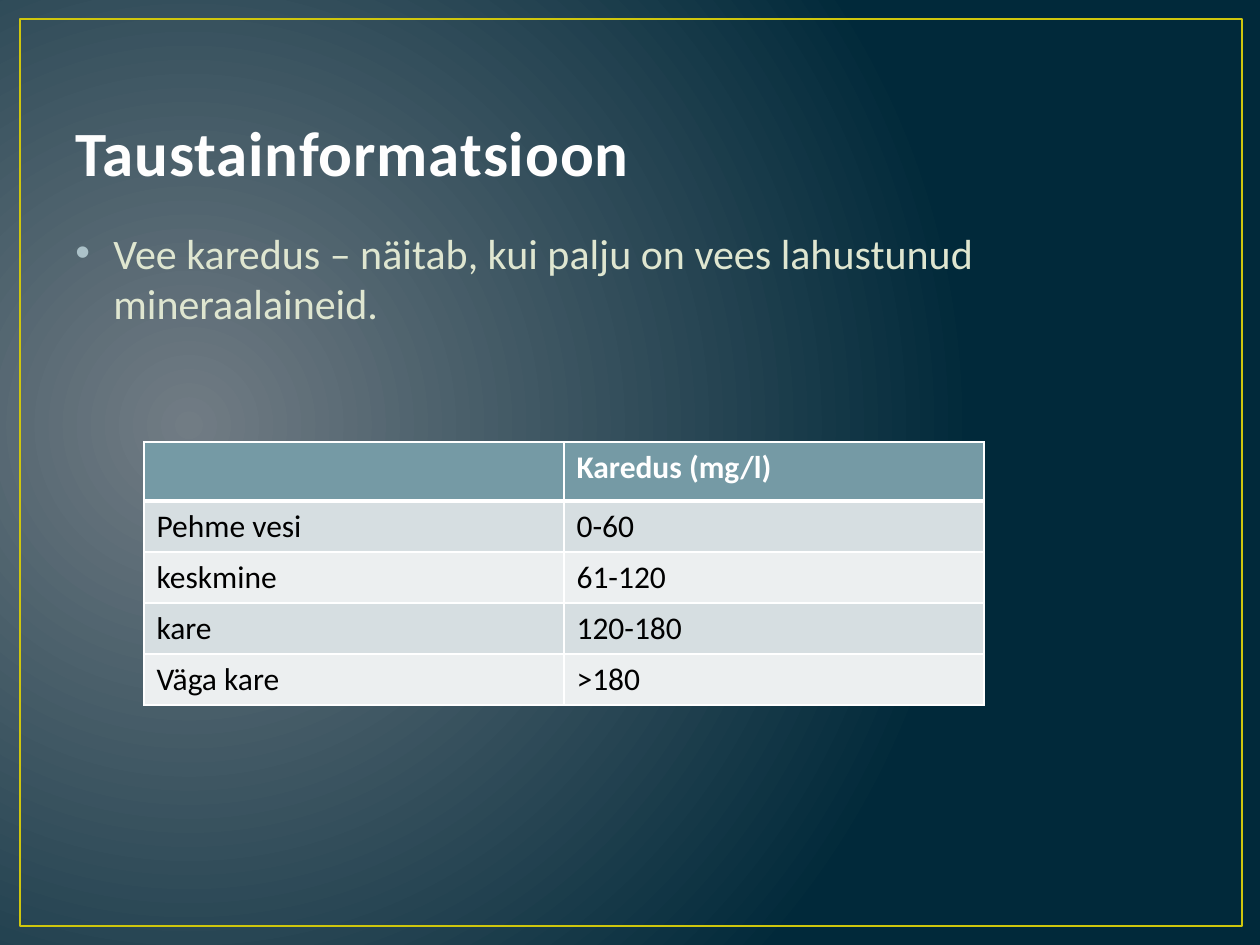
from lxml import etree
from pptx import Presentation
from pptx.dml.color import RGBColor
from pptx.enum.shapes import MSO_SHAPE
from pptx.enum.text import MSO_ANCHOR
from pptx.oxml import parse_xml
from pptx.oxml.ns import nsdecls, qn
from pptx.util import Pt

RECT = MSO_SHAPE.RECTANGLE
TOP, BOTTOM = MSO_ANCHOR.TOP, MSO_ANCHOR.BOTTOM
PX = 914400 / 126
FONT = "Calibri"
HUES = {
    "glow": "717C84", "night": "01293A", "frame": "CFC60D",
    "title": "FEFEFE", "edge": "384F55", "body": "DFE6D0",
    "bullet": "ACC2C9", "head": "759AA5", "odd": "D6DEE1",
    "even": "ECEFF0", "white": "FFFFFF", "black": "000000",
}


def emu(*sizes):
    return [round(size * PX) for size in sizes]


def style(para, size, hue, bold=False):
    """Format every run of a paragraph."""
    for run in para.runs:
        font = run.font
        font.name, font.size, font.bold = FONT, Pt(size), bold
        font.color.rgb = RGBColor.from_string(HUES[hue])


deck = Presentation()
deck.slide_width, deck.slide_height = emu(1260, 945)
slide = deck.slides.add_slide(deck.slide_layouts[6])
shapes = slide.shapes

# Radial background
fill = slide.background.fill
fill.gradient()
for stop, hue, place in zip(fill.gradient_stops, ("glow", "night"), (0, 1)):
    stop.color.rgb = RGBColor.from_string(HUES[hue])
    stop.position = place
grad = slide.element.find(".//" + qn("a:gradFill"))
grad.remove(grad.find(qn("a:lin")))
glow = etree.SubElement(grad, qn("a:path"), path="circle")
etree.SubElement(glow, qn("a:fillToRect"),
                 l="15000", t="50000", r="85000", b="60000")

# Frame
frame = shapes.add_shape(RECT, *emu(20, 19, 1222, 907))
frame.shadow.inherit = False
frame.fill.background()
frame.line.color.rgb = RGBColor.from_string(HUES["frame"])
frame.line.width = Pt(1.5)

# Title and body
texts = [
    ("Taustainformatsioon", (63, 38, 1134, 157), BOTTOM, 36, "title", True),
    ("Vee karedus – näitab, kui palju on vees lahustunud mineraalaineid.",
     (63, 221, 1134, 623), TOP, 24, "body", False),
]
paras = []
for text, box, anchor, size, hue, bold in texts:
    frame = shapes.add_textbox(*emu(*box)).text_frame
    frame.word_wrap = True
    frame.vertical_anchor = anchor
    frame.text = text
    style(frame.paragraphs[0], size, hue, bold)
    paras.append(frame.paragraphs[0])
title, body = paras

props = title.runs[0].font._element
props.set("spc", "50")
props.insert(0, parse_xml(
    f'<a:ln {nsdecls("a")} w="{Pt(1.05)}"><a:solidFill>'
    f'<a:srgbClr val="{HUES["edge"]}"/></a:solidFill></a:ln>'))

props = body._p.get_or_add_pPr()
indent = emu(38)[0]
props.set("marL", str(indent))
props.set("indent", str(-indent))
for part in (
    '<a:spcBef {}><a:spcPct val="20000"/></a:spcBef>',
    '<a:buClr {}><a:srgbClr val="' + HUES["bullet"] + '"/></a:buClr>',
    '<a:buFont {} typeface="Arial"/>',
    '<a:buChar {} char="•"/>',
):
    props.append(parse_xml(part.format(nsdecls("a"))))

# Hardness table
rows = [
    ("", "Karedus (mg/l)"),
    ("Pehme vesi", "0-60"),
    ("keskmine", "61-120"),
    ("kare", "120-180"),
    ("Väga kare", ">180"),
]
table = shapes.add_table(len(rows), 2, *emu(144, 442, 840, 263)).table
for col in table.columns:
    col.width = emu(420)[0]
for r, row in enumerate(rows):
    table.rows[r].height = emu(51 if r else 59)[0]
    shade = "head" if r == 0 else "odd" if r % 2 else "even"
    widths = {"L": 1, "R": 1, "T": 3 if r == 1 else 1, "B": 1 if r else 3}
    for c, text in enumerate(row):
        cell = table.cell(r, c)
        cell.text = text
        style(cell.text_frame.paragraphs[0], 18,
              "black" if r else "white", r == 0)
        props = cell._tc.get_or_add_tcPr()
        for side, width in widths.items():
            props.append(parse_xml(
                f'<a:ln{side} {nsdecls("a")} w="{Pt(width)}"><a:solidFill>'
                f'<a:srgbClr val="{HUES["white"]}"/>'
                f'</a:solidFill></a:ln{side}>'))
        cell.fill.solid()
        cell.fill.fore_color.rgb = RGBColor.from_string(HUES[shade])

deck.save("out.pptx")
